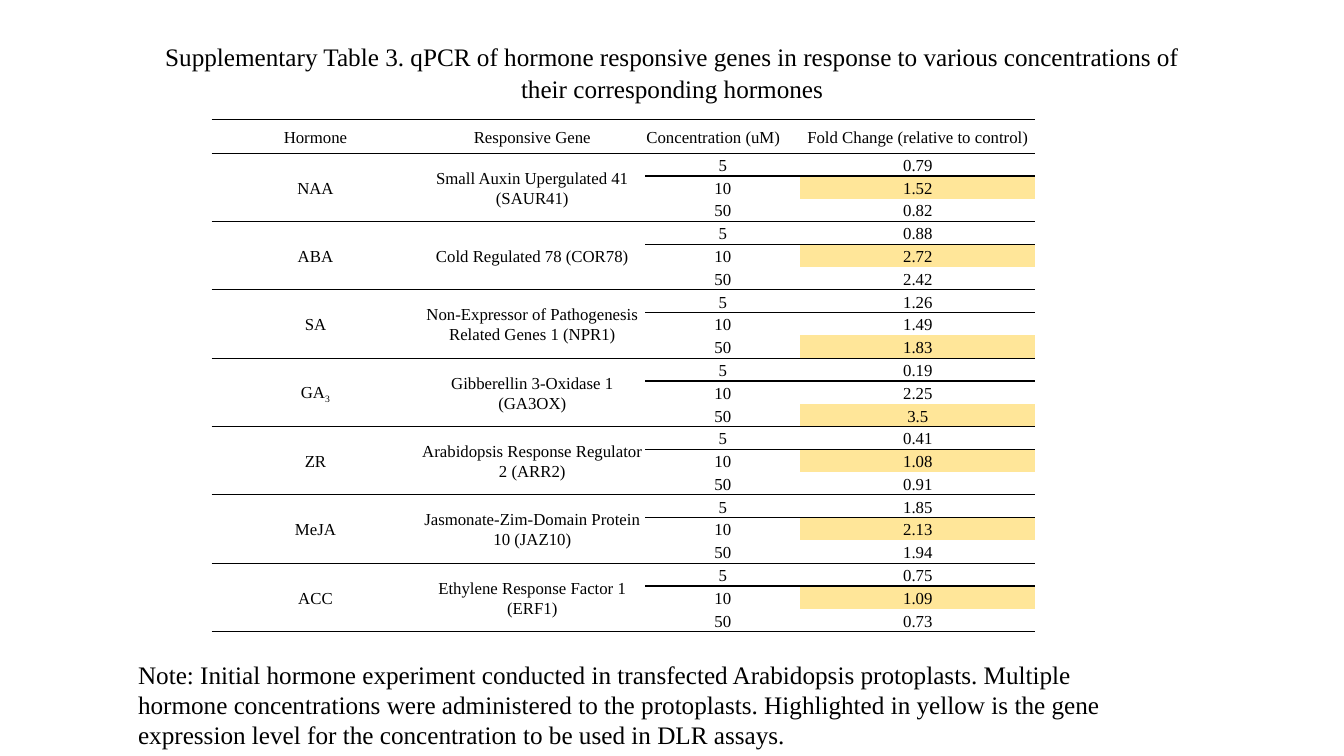
import pptx
import pptx.dml.color
import pptx.enum.text
import pptx.oxml
import pptx.oxml.ns
import pptx.util
import lxml.etree

Cm = pptx.util.Cm
Pt = pptx.util.Pt
ALIGN = pptx.enum.text.PP_ALIGN

COLORS = {"ink": "000000", "highlight": "FFE699"}
PLAIN_TABLE_STYLE = "{2D5ABB26-0587-4C30-8999-92F81FD0307C}"

TITLE = ("Supplementary Table 3. qPCR of hormone responsive genes in response to "
         "various concentrations of their corresponding hormones")
NOTE = ("Note: Initial hormone experiment conducted in transfected Arabidopsis protoplasts. "
        "Multiple hormone concentrations were administered to the protoplasts. Highlighted "
        "in yellow is the gene expression level for the concentration to be used in DLR assays.")
HEADINGS = ["Hormone", "Responsive Gene", "Concentration (uM)",
            "Fold Change (relative to control)"]
CONCENTRATIONS = ["5", "10", "50"]
# hormone, subscript, gene, fold changes, index of the highlighted fold change
HORMONES = [
    ("NAA", "", "Small Auxin Upergulated 41 (SAUR41)", ["0.79", "1.52", "0.82"], 1),
    ("ABA", "", "Cold Regulated 78 (COR78)", ["0.88", "2.72", "2.42"], 1),
    ("SA", "", "Non-Expressor of Pathogenesis Related Genes 1 (NPR1)",
     ["1.26", "1.49", "1.83"], 2),
    ("GA", "3", "Gibberellin 3-Oxidase 1 (GA3OX)", ["0.19", "2.25", "3.5"], 2),
    ("ZR", "", "Arabidopsis Response Regulator 2 (ARR2)", ["0.41", "1.08", "0.91"], 1),
    ("MeJA", "", "Jasmonate-Zim-Domain Protein 10 (JAZ10)", ["1.85", "2.13", "1.94"], 1),
    ("ACC", "", "Ethylene Response Factor 1 (ERF1)", ["0.75", "1.09", "0.73"], 1),
]
COLUMN_WIDTHS = [5.24, 5.69, 3.91, 5.92]
HEADER_HEIGHT, ROW_HEIGHT = 0.85, 0.57


class SlideBuilder:
    font = "Times New Roman"
    line_spacing = 1.07

    def __init__(self, slide):
        self.slide = slide

    def run(self, paragraph, text, size, subscript=False):
        run = paragraph.add_run()
        run.text = text
        run.font.name = self.font
        run.font.size = Pt(size)
        run.font.color.rgb = pptx.dml.color.RGBColor.from_string(COLORS["ink"])
        if subscript:
            run.font._element.set("baseline", "-25000")

    def text(self, left, top, width, height, text, align=ALIGN.LEFT,
             line_spacing=None, space_after=None):
        frame = self.slide.shapes.add_textbox(
            Cm(left), Cm(top), Cm(width), Cm(height)).text_frame
        frame.word_wrap = True
        frame.auto_size = pptx.enum.text.MSO_AUTO_SIZE.SHAPE_TO_FIT_TEXT
        paragraph = frame.paragraphs[0]
        paragraph.alignment = align
        paragraph.line_spacing = line_spacing
        paragraph.space_after = space_after
        self.run(paragraph, text, 18)

    def table(self, left, top, column_widths, row_heights):
        table = self.slide.shapes.add_table(
            len(row_heights), len(column_widths), Cm(left), Cm(top),
            Cm(sum(column_widths)), Cm(sum(row_heights))).table
        table.first_row = table.horz_banding = False
        table._tbl.tblPr.find(pptx.oxml.ns.qn("a:tableStyleId")).text = PLAIN_TABLE_STYLE
        for column, width in zip(table.columns, column_widths):
            column.width = Cm(width)
        for row, height in zip(table.rows, row_heights):
            row.height = Cm(height)
        return table

    def cell(self, cell, text, subscript="", align=ALIGN.CENTER, fill=None):
        cell.margin_left = cell.margin_right = cell.margin_top = Cm(0.03)
        cell.margin_bottom = 0
        cell.vertical_anchor = pptx.enum.text.MSO_ANCHOR.MIDDLE
        paragraph = cell.text_frame.paragraphs[0]
        paragraph.alignment = align
        paragraph.line_spacing = self.line_spacing
        self.run(paragraph, text, 12)
        if subscript:
            self.run(paragraph, subscript, 12, subscript=True)
        if fill:
            cell.fill.solid()
            cell.fill.fore_color.rgb = pptx.dml.color.RGBColor.from_string(COLORS[fill])
        else:
            cell.fill.background()

    def borders(self, cell, top, bottom):
        """Rule the top and bottom edges as asked; call before filling the cell."""
        properties = cell._tc.get_or_add_tcPr()
        for edge, shown in (("L", False), ("R", False), ("T", top), ("B", bottom)):
            line = lxml.etree.SubElement(
                properties, pptx.oxml.ns.qn(f"a:ln{edge}"), w=str(Pt(1)))
            paint = lxml.etree.SubElement(
                line, pptx.oxml.ns.qn("a:solidFill" if shown else "a:noFill"))
            if shown:
                lxml.etree.SubElement(
                    paint, pptx.oxml.ns.qn("a:srgbClr"), val=COLORS["ink"])


def fill_hormone_table(builder, table):
    for column, heading in enumerate(HEADINGS):
        header = table.cell(0, column)
        builder.borders(header, True, True)
        builder.cell(header, heading, align=ALIGN.LEFT if column == 2 else ALIGN.CENTER)

    count = len(CONCENTRATIONS)
    for group, (hormone, subscript, gene, folds, best) in enumerate(HORMONES):
        first = 1 + group * count
        last = first + count - 1
        for column in (0, 1):
            for row in range(first, last + 1):
                builder.borders(table.cell(row, column), row == first, row in (first, last))
            table.cell(first, column).merge(table.cell(last, column))
        builder.cell(table.cell(first, 0), hormone, subscript)
        builder.cell(table.cell(first, 1), gene)
        for index, (concentration, fold) in enumerate(zip(CONCENTRATIONS, folds)):
            dose_cell, fold_cell = (table.cell(first + index, column) for column in (2, 3))
            for cell in (dose_cell, fold_cell):
                builder.borders(cell, index < 2, index != 1)
            builder.cell(dose_cell, concentration)
            builder.cell(fold_cell, fold, fill="highlight" if index == best else None)


def main():
    presentation = pptx.Presentation()
    presentation.slide_width = Cm(33.87)
    presentation.slide_height = Cm(19.05)
    builder = SlideBuilder(presentation.slides.add_slide(presentation.slide_layouts[6]))

    builder.text(3.48, 0.86, 26.92, 1.85, TITLE, ALIGN.CENTER,
                 builder.line_spacing, Pt(8))
    builder.text(3.23, 16.48, 25.1, 2.57, NOTE)
    row_heights = [HEADER_HEIGHT] + [ROW_HEIGHT] * (len(HORMONES) * len(CONCENTRATIONS))
    fill_hormone_table(builder, builder.table(5.33, 3.01, COLUMN_WIDTHS, row_heights))
    presentation.save("out.pptx")


if __name__ == "__main__":
    main()
